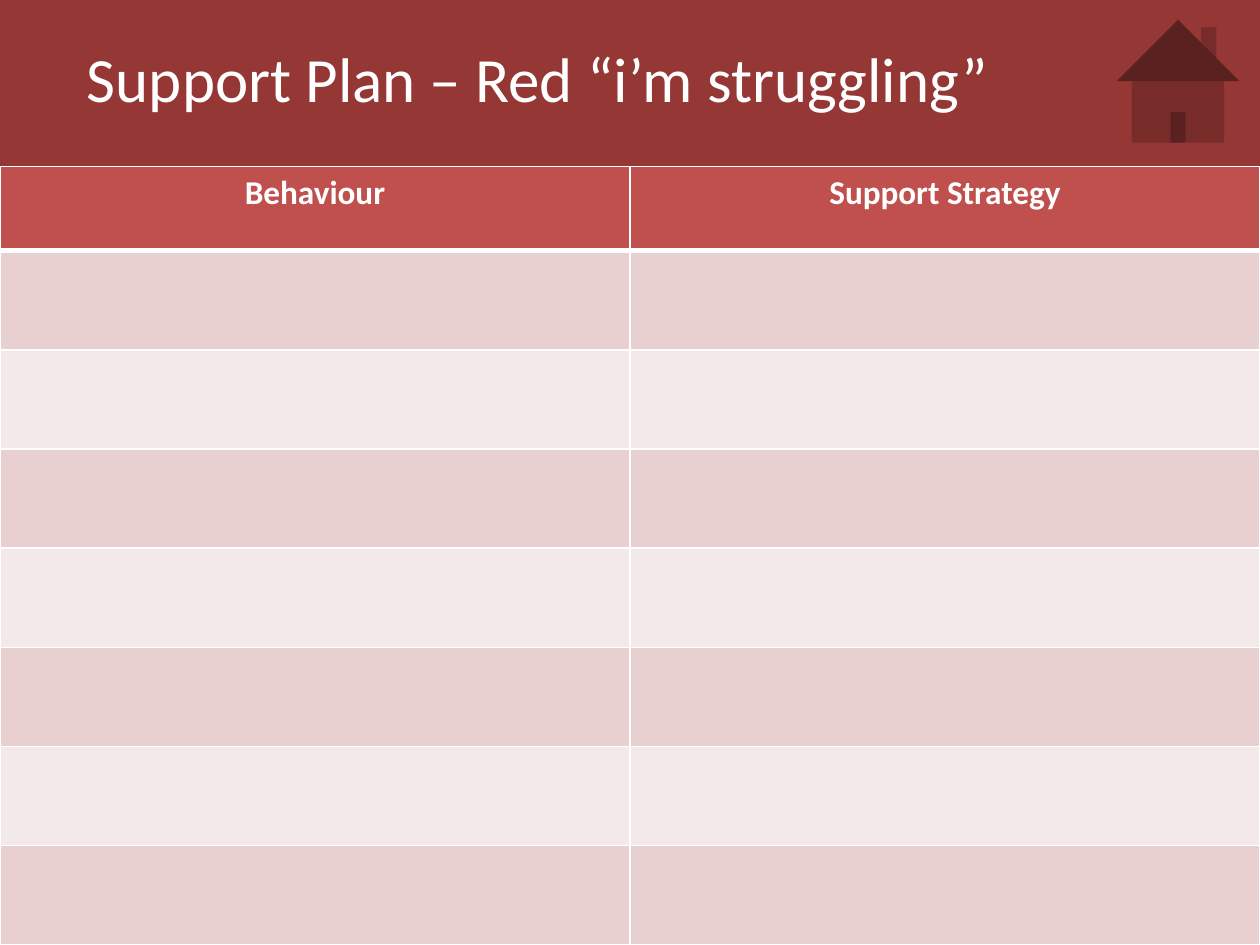
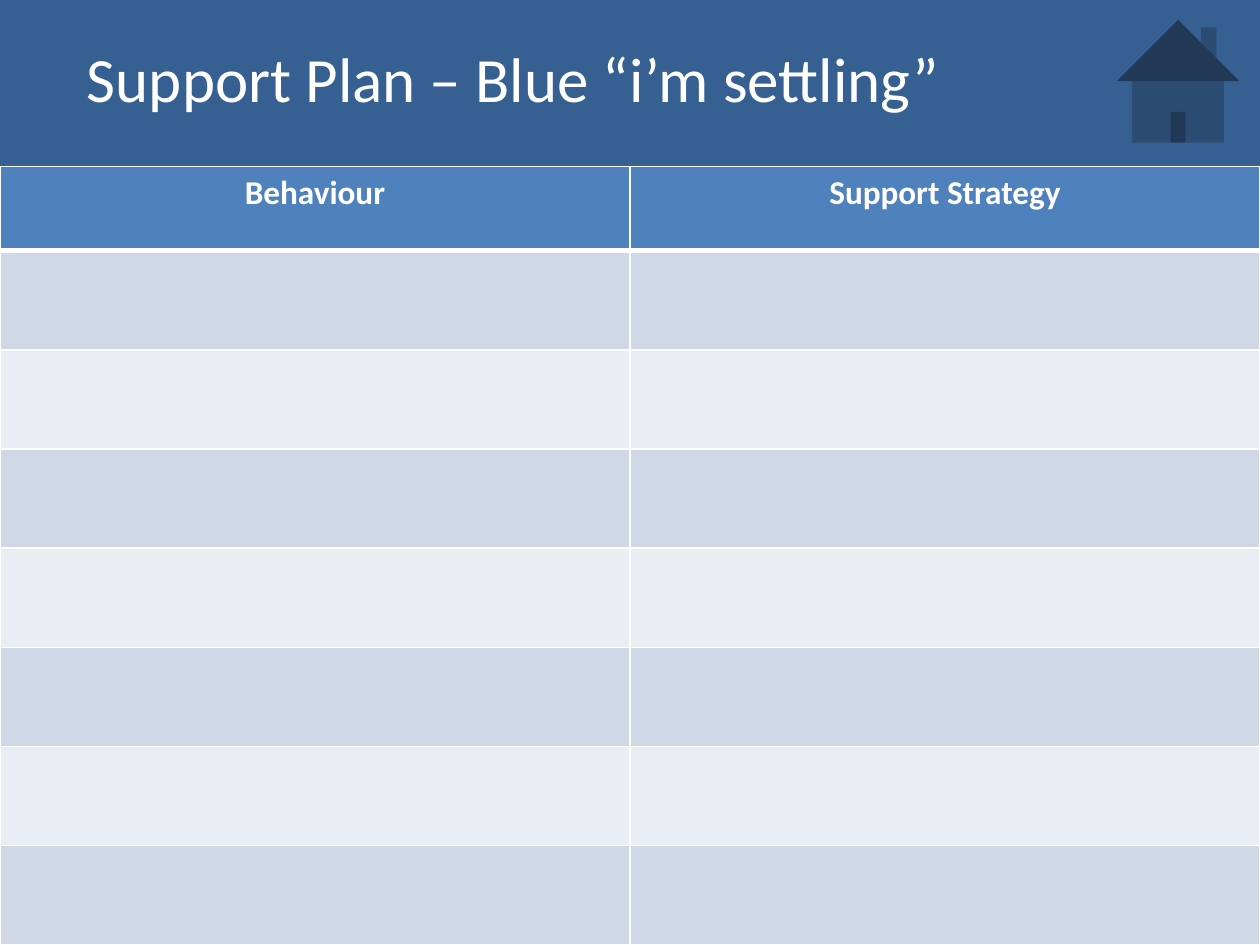
from lxml import etree
from pptx import Presentation
from pptx.dml.color import RGBColor as RGB
from pptx.enum.shapes import MSO_SHAPE as SHAPE
from pptx.enum.text import MSO_ANCHOR as ANCHOR, MSO_AUTO_SIZE as AUTO, PP_ALIGN as ALIGN
from pptx.oxml.ns import qn
from pptx.util import Inches, Pt

COLORS = {
    "white": "FFFFFF",
    "red_band": "953735", "red_head": "C0504D", "red_dark": "E8D0D0", "red_light": "F4E9E9",
    "blue_band": "376092", "blue_head": "4F81BD", "blue_dark": "D0D8E8", "blue_light": "E9EDF4",
}
FONT = "Calibri"
HEADINGS = ["Behaviour", "Support Strategy"]
BODY_ROWS = 7
TABLE_HEIGHT, HEAD_HEIGHT = 6.18, 0.67
PLANS = [
    ("red", "Support Plan – Red “i’m struggling”"),
    ("blue", "Support Plan – Blue “i’m settling”"),
]


def style_text(p, size, align, bold=False):
    p.alignment = align
    for r in p.runs:
        r.font.name = FONT
        r.font.size = Pt(size)
        r.font.bold = bold
        r.font.color.rgb = RGB.from_string(COLORS["white"])


def add_block(s, kind, left, top, width, height, color):
    sp = s.shapes.add_shape(kind, Inches(left), Inches(top), Inches(width), Inches(height))
    sp.shadow.inherit = False
    sp.fill.solid()
    sp.fill.fore_color.rgb = RGB.from_string(COLORS[color])
    sp.line.fill.background()
    return sp


def add_band(s, color):
    band = add_block(s, SHAPE.RECTANGLE, 0, 0, 10.02, 1.33, color)
    s.shapes.title.element.addprevious(band.element)


def set_title(s, text):
    title = s.shapes.title
    title.left, title.top = Inches(0.59), Inches(0.26)
    title.width, title.height = Inches(8.94), Inches(0.71)
    tf = title.text_frame
    tf.text = text
    tf.word_wrap = True
    tf.auto_size = AUTO.NONE
    tf.vertical_anchor = ANCHOR.TOP
    style_text(tf.paragraphs[0], 36, ALIGN.LEFT)


def set_borders(cell, top, bottom):
    tc_pr = cell._tc.get_or_add_tcPr()
    for side, width in (("L", 1), ("R", 1), ("T", top), ("B", bottom)):
        ln = etree.SubElement(tc_pr, qn(f"a:ln{side}"), w=str(Pt(width)))
        fill = etree.SubElement(ln, qn("a:solidFill"))
        etree.SubElement(fill, qn("a:srgbClr"), val=COLORS["white"])


def set_cell(cell, color, top, bottom):
    set_borders(cell, top, bottom)
    cell.fill.solid()
    cell.fill.fore_color.rgb = RGB.from_string(COLORS[color])


def add_plan_table(s, theme):
    frame = s.shapes.add_table(BODY_ROWS + 1, len(HEADINGS), Inches(0), Inches(1.32),
                               Inches(10), Inches(TABLE_HEIGHT))
    table = frame.table
    for i, row in enumerate(table.rows):
        row.height = Inches((TABLE_HEIGHT - HEAD_HEIGHT) / BODY_ROWS if i else HEAD_HEIGHT)
        shade = ("dark" if i % 2 else "light") if i else "head"
        for cell in row.cells:
            set_cell(cell, f"{theme}_{shade}", 3 if i == 1 else 1, 1 if i else 3)
    for cell, heading in zip(table.rows[0].cells, HEADINGS):
        cell.text = heading
        style_text(cell.text_frame.paragraphs[0], 19, ALIGN.CENTER, bold=True)


def add_plan_slide(prs, theme, title):
    s = prs.slides.add_slide(prs.slide_layouts[5])
    add_band(s, f"{theme}_band")
    set_title(s, title)
    add_plan_table(s, theme)
    add_block(s, SHAPE.ACTION_BUTTON_HOME, 8.7, -0.02, 1.3, 1.33, f"{theme}_band")


def main():
    prs = Presentation()
    prs.slide_width, prs.slide_height = Inches(10), Inches(7.5)
    for theme, title in PLANS:
        add_plan_slide(prs, theme, title)
    prs.save("out.pptx")


if __name__ == "__main__":
    main()
